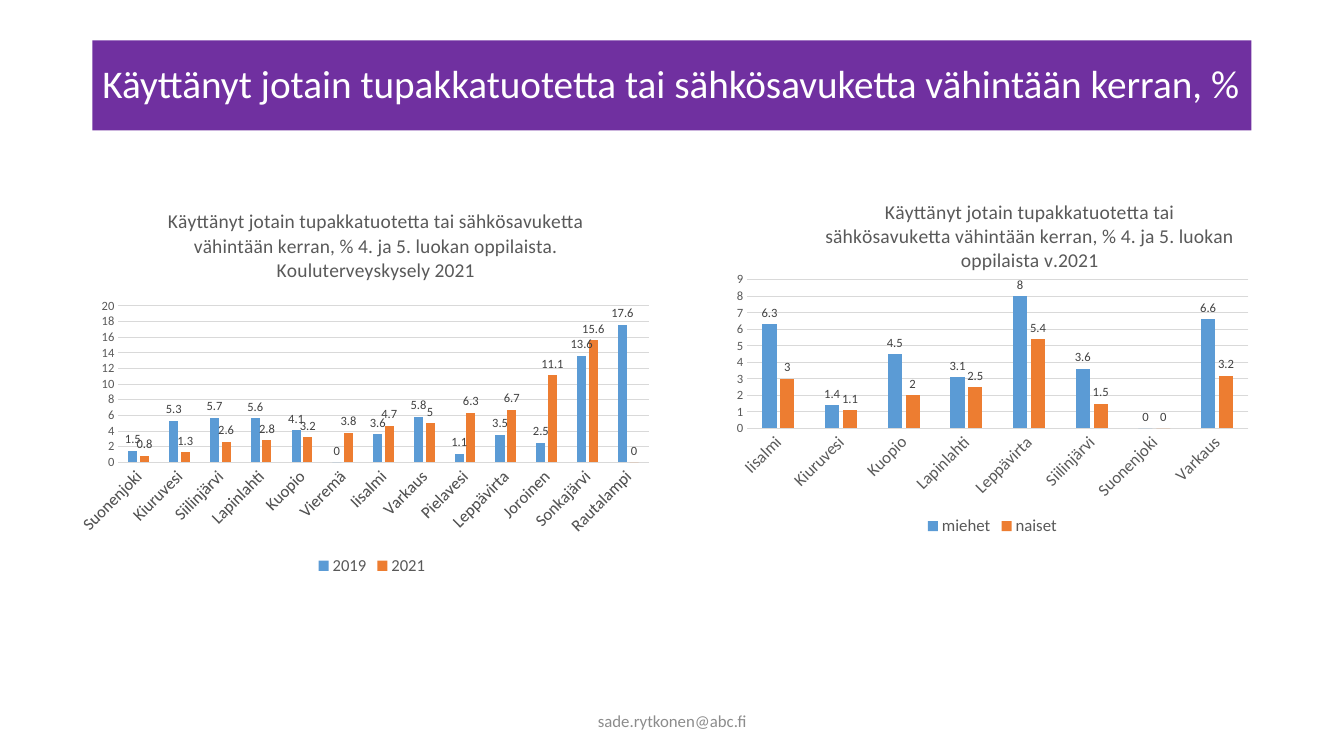
from lxml.etree import SubElement
from pptx import Presentation
from pptx.chart.data import CategoryChartData
from pptx.dml.color import RGBColor
from pptx.enum.chart import (XL_CHART_TYPE, XL_LABEL_POSITION,
                             XL_LEGEND_POSITION, XL_TICK_MARK)
from pptx.enum.shapes import MSO_SHAPE
from pptx.enum.text import MSO_ANCHOR, PP_ALIGN
from pptx.oxml.ns import qn
from pptx.util import Cm, Pt

FONT = "Calibri"
PURPLE = RGBColor(0x70, 0x30, 0xA0)
WHITE = RGBColor(0xFF, 0xFF, 0xFF)
BLUE = RGBColor(0x5B, 0x9B, 0xD5)
ORANGE = RGBColor(0xED, 0x7D, 0x31)
LABEL_GREY = RGBColor(0x40, 0x40, 0x40)
TEXT_GREY = RGBColor(0x59, 0x59, 0x59)
FOOTER_GREY = RGBColor(0x8C, 0x8C, 0x8C)
GRID_GREY = RGBColor(0xD9, 0xD9, 0xD9)

QUESTION = "Käyttänyt jotain tupakkatuotetta tai sähkösavuketta vähintään kerran, %"

YEAR_CHART = {
    "title": QUESTION + " 4. ja 5. luokan oppilaista. Kouluterveyskysely 2021",
    "categories": ["Suonenjoki", "Kiuruvesi", "Siilinjärvi", "Lapinlahti",
                   "Kuopio", "Vieremä", "Iisalmi", "Varkaus", "Pielavesi",
                   "Leppävirta", "Joroinen", "Sonkajärvi", "Rautalampi"],
    "series": {
        "2019": [1.5, 5.3, 5.7, 5.6, 4.1, 0, 3.6, 5.8, 1.1, 3.5, 2.5, 13.6, 17.6],
        "2021": [0.8, 1.3, 2.6, 2.8, 3.2, 3.8, 4.7, 5, 6.3, 6.7, 11.1, 15.6, 0],
    },
    "maximum": 20, "step": 2,
    "title_layout": {"x": 0.14, "y": 0.04},
    "plot_layout": {"x": 0.06, "y": 0.3, "w": 0.92, "h": 0.4},
}
GENDER_CHART = {
    "title": QUESTION + " 4. ja 5. luokan oppilaista v.2021",
    "categories": ["Iisalmi", "Kiuruvesi", "Kuopio", "Lapinlahti",
                   "Leppävirta", "Siilinjärvi", "Suonenjoki", "Varkaus"],
    "series": {
        "miehet": [6.3, 1.4, 4.5, 3.1, 8, 3.6, 0, 6.6],
        "naiset": [3, 1.1, 2, 2.5, 5.4, 1.5, 0, 3.2],
    },
    "maximum": 9, "step": 1,
    "title_layout": {"x": 0.18, "y": 0.07},
    "plot_layout": {"x": 0.04, "y": 0.3, "w": 0.94, "h": 0.4},
}


def style_font(font, size, color):
    font.name = FONT
    font.size = Pt(size)
    font.bold = False
    font.color.rgb = color


def style_line(line, color):
    line.color.rgb = color
    line.width = Pt(0.75)


def write_line(shape, text, size, color, alignment):
    frame = shape.text_frame
    frame.word_wrap = True
    frame.vertical_anchor = MSO_ANCHOR.MIDDLE
    paragraph = frame.paragraphs[0]
    paragraph.alignment = alignment
    run = paragraph.add_run()
    run.text = text
    style_font(run.font, size, color)
    return paragraph


def set_layout(parent, index, fractions):
    """Place a chart part by fractions of the chart area."""
    for old_layout in parent.findall(qn("c:layout")):
        parent.remove(old_layout)
    layout = SubElement(parent, qn("c:layout"))
    parent.insert(index, layout)
    manual = SubElement(layout, qn("c:manualLayout"))
    if "w" in fractions:
        SubElement(manual, qn("c:layoutTarget")).set("val", "inner")
    for key in ("x", "y"):
        SubElement(manual, qn(f"c:{key}Mode")).set("val", "edge")
    for key, value in fractions.items():
        SubElement(manual, qn(f"c:{key}")).set("val", str(value))


def add_title_bar(slide, box):
    bar = slide.shapes.add_shape(MSO_SHAPE.RECTANGLE, *box)
    bar.shadow.inherit = False
    bar.fill.solid()
    bar.fill.fore_color.rgb = PURPLE
    bar.line.fill.background()
    paragraph = write_line(bar, QUESTION, 28, WHITE, PP_ALIGN.LEFT)
    paragraph.line_spacing = 0.9


def style_axes(chart, maximum, step):
    category_axis, value_axis = chart.category_axis, chart.value_axis
    for axis, size in ((category_axis, 12), (value_axis, 9)):
        axis.major_tick_mark = XL_TICK_MARK.NONE
        axis.minor_tick_mark = XL_TICK_MARK.NONE
        style_font(axis.tick_labels.font, size, TEXT_GREY)
    style_line(category_axis.format.line, GRID_GREY)
    body = chart.element.xpath(".//c:catAx/c:txPr/a:bodyPr")[0]
    body.set("rot", "-2700000")
    body.set("vert", "horz")
    value_axis.format.line.fill.background()
    style_line(value_axis.major_gridlines.format.line, GRID_GREY)
    value_axis.minimum_scale = 0
    value_axis.maximum_scale = maximum
    value_axis.major_unit = step


def add_column_chart(slide, box, content):
    data = CategoryChartData()
    data.categories = content["categories"]
    for name, values in content["series"].items():
        data.add_series(name, values)
    chart = slide.shapes.add_chart(
        XL_CHART_TYPE.COLUMN_CLUSTERED, *box, data).chart
    chart.font.name = FONT
    chart.font.size = Pt(10)

    chart.has_title = True
    run = chart.chart_title.text_frame.paragraphs[0].add_run()
    run.text = content["title"]
    style_font(run.font, 14, TEXT_GREY)
    chart.chart_title.include_in_layout = False
    set_layout(chart.element.xpath("c:chart/c:title")[0], 1,
               content["title_layout"])
    set_layout(chart.element.xpath("c:chart/c:plotArea")[0], 0,
               content["plot_layout"])

    chart.has_legend = True
    chart.legend.position = XL_LEGEND_POSITION.BOTTOM
    chart.legend.include_in_layout = False
    style_font(chart.legend.font, 12, TEXT_GREY)
    style_axes(chart, content["maximum"], content["step"])

    plot = chart.plots[0]
    plot.vary_by_categories = False
    plot.gap_width = 219
    plot.overlap = -27
    for series, color in zip(plot.series, (BLUE, ORANGE)):
        series.format.fill.solid()
        series.format.fill.fore_color.rgb = color
        labels = series.data_labels
        labels.show_value = True
        labels.position = XL_LABEL_POSITION.OUTSIDE_END
        style_font(labels.font, 9, LABEL_GREY)


def add_footer(slide, box):
    footer = slide.shapes.add_textbox(*box)
    write_line(footer, "sade.rytkonen@abc.fi", 12, FOOTER_GREY, PP_ALIGN.CENTER)


def main():
    presentation = Presentation()
    presentation.slide_width = Cm(33.87)
    presentation.slide_height = Cm(19.05)
    slide = presentation.slides.add_slide(presentation.slide_layouts[6])
    add_title_bar(slide, (Cm(2.33), Cm(1.02), Cm(29.21), Cm(2.27)))
    add_column_chart(slide, (Cm(1.98), Cm(4.75), Cm(14.66), Cm(9.86)), YEAR_CHART)
    add_column_chart(slide, (Cm(18.29), Cm(4.24), Cm(13.44), Cm(9.37)), GENDER_CHART)
    add_footer(slide, (Cm(11.23), Cm(17.65), Cm(11.43), Cm(1.02)))
    presentation.save("out.pptx")


if __name__ == "__main__":
    main()
